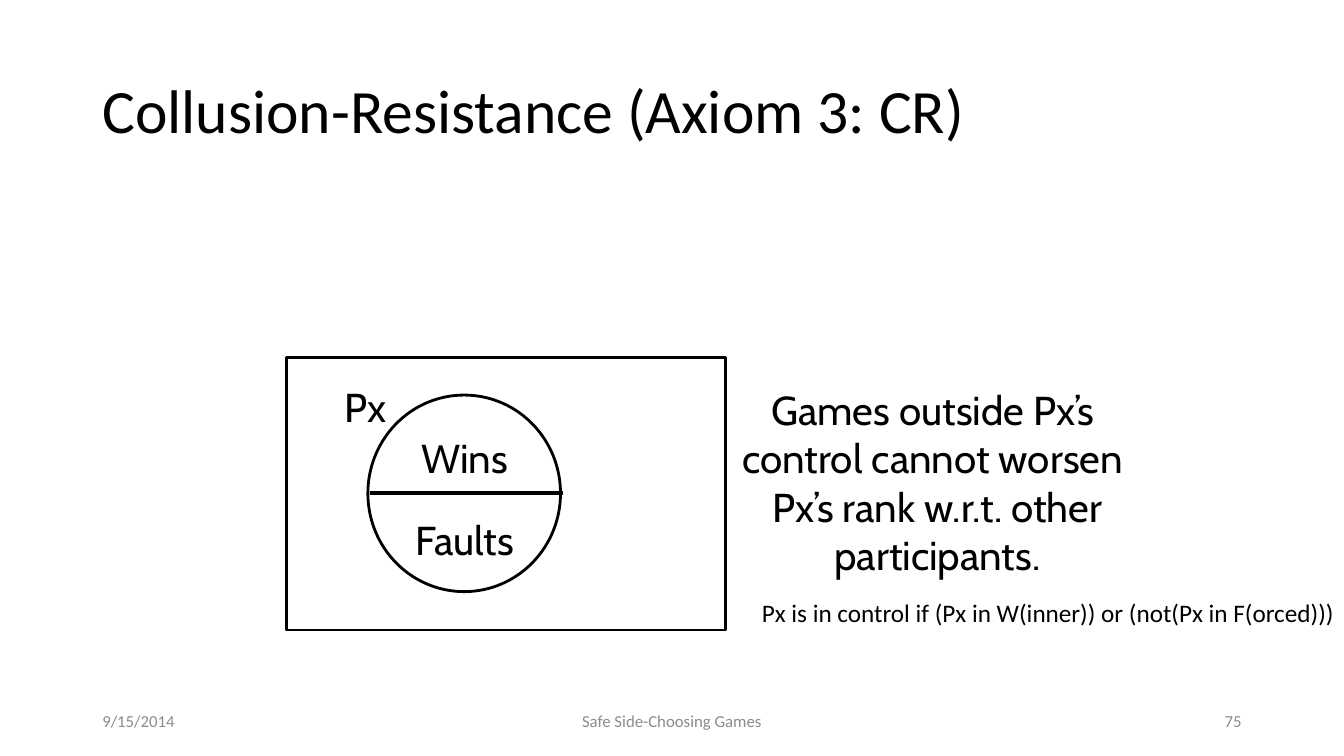
from lxml import etree
from pptx import Presentation
from pptx.dml.color import RGBColor
from pptx.enum.shapes import MSO_CONNECTOR, MSO_SHAPE
from pptx.enum.text import MSO_ANCHOR, MSO_AUTO_SIZE, PP_ALIGN
from pptx.oxml.ns import qn
from pptx.util import Pt

LEFT, CENTER, RIGHT = PP_ALIGN.LEFT, PP_ALIGN.CENTER, PP_ALIGN.RIGHT
TOP, MIDDLE = MSO_ANCHOR.TOP, MSO_ANCHOR.MIDDLE
NO_FIT = MSO_AUTO_SIZE.NONE
RECT, OVAL = MSO_SHAPE.RECTANGLE, MSO_SHAPE.OVAL
STRAIGHT = MSO_CONNECTOR.STRAIGHT
COLORS = {"ink": "000000", "footer": "8C8C8C"}


def color(name):
    """Return the named colour."""
    return RGBColor.from_string(COLORS[name])


def write(tf, lines, size, font, ink="ink", align=LEFT):
    """Write one paragraph per line into a text frame."""
    for i, line in enumerate(lines):
        p = tf.paragraphs[0] if i == 0 else tf.add_paragraph()
        p.alignment = align
        r = p.add_run()
        r.text = line
        r.font.size = Pt(size)
        r.font.name = font
        r.font.color.rgb = color(ink)


def add_title(s, text):
    """Place and fill the title placeholder."""
    sp = s.shapes.title
    sp.left, sp.top, sp.width, sp.height = Pt(66), Pt(29), Pt(828), Pt(104.4)
    tf = sp.text_frame
    tf.auto_size = NO_FIT
    tf.vertical_anchor = MIDDLE
    write(tf, [text], 44, "Calibri")
    tf.paragraphs[0].line_spacing = 0.9


def add_text(s, box, lines, size, font, ink="ink", align=LEFT,
             anchor=MIDDLE, wrap=True, inset=True):
    """Add a text box."""
    tf = s.shapes.add_textbox(*map(Pt, box)).text_frame
    tf.word_wrap = wrap
    tf.vertical_anchor = anchor
    if not inset:
        tf.margin_left = tf.margin_right = tf.margin_top = tf.margin_bottom = 0
    write(tf, lines, size, font, ink, align)


def add_outline(s, kind, box):
    """Add an unfilled shape with a thin outline."""
    sp = s.shapes.add_shape(kind, *map(Pt, box))
    sp.shadow.inherit = False
    sp.fill.background()
    sp.line.color.rgb = color("ink")
    sp.line.width = Pt(2)


def add_line(s, x1, y1, x2, y2):
    """Add a straight thick line."""
    cx = s.shapes.add_connector(STRAIGHT, Pt(x1), Pt(y1), Pt(x2), Pt(y2))
    cx.line.color.rgb = color("ink")
    cx.line.width = Pt(3)
    etree.SubElement(cx._element.spPr, qn("a:effectLst"))


def main():
    """Build the slide and save it."""
    prs = Presentation()
    prs.slide_width, prs.slide_height = Pt(960), Pt(540)
    s = prs.slides.add_slide(prs.slide_layouts[5])
    add_title(s, "Collusion-Resistance (Axiom 3: CR)")

    add_outline(s, OVAL, (262.8, 282.2, 137.6, 140.4))
    add_outline(s, RECT, (204.5, 255.6, 313.9, 194.4))
    add_line(s, 264.2, 352.1, 402.5, 352.1)
    for text, x, y, width in (("Px", 244.1, 272.9, 33.8),
                              ("Wins", 299.5, 309.6, 64.8),
                              ("Faults", 292.3, 367.9, 79.2)):
        add_text(s, (x, y, width, 34.6), [text], 28.8, "Cabin",
                 align=CENTER, wrap=False, inset=False)

    add_text(s, (499.7, 276.5, 339.8, 135.4),
             ["Games outside Px’s ", "control cannot worsen ",
              "Px’s rank w.r.t. other participants."],
             28.8, "Cabin", align=CENTER, inset=False)
    add_text(s, (537.1, 423.4, 428.4, 51.1),
             ["Px is in control if (Px in W(inner)) or (not(Px in F(orced)))"],
             18, "Calibri", anchor=TOP, wrap=False)

    for text, x, width, align in (("9/15/2014", 66, 216, LEFT),
                                  ("Safe Side-Choosing Games", 318, 324, CENTER),
                                  ("75", 678, 216, RIGHT)):
        add_text(s, (x, 500.5, width, 28.75), [text], 12, "Calibri",
                 ink="footer", align=align)
    prs.save("out.pptx")


if __name__ == "__main__":
    main()
